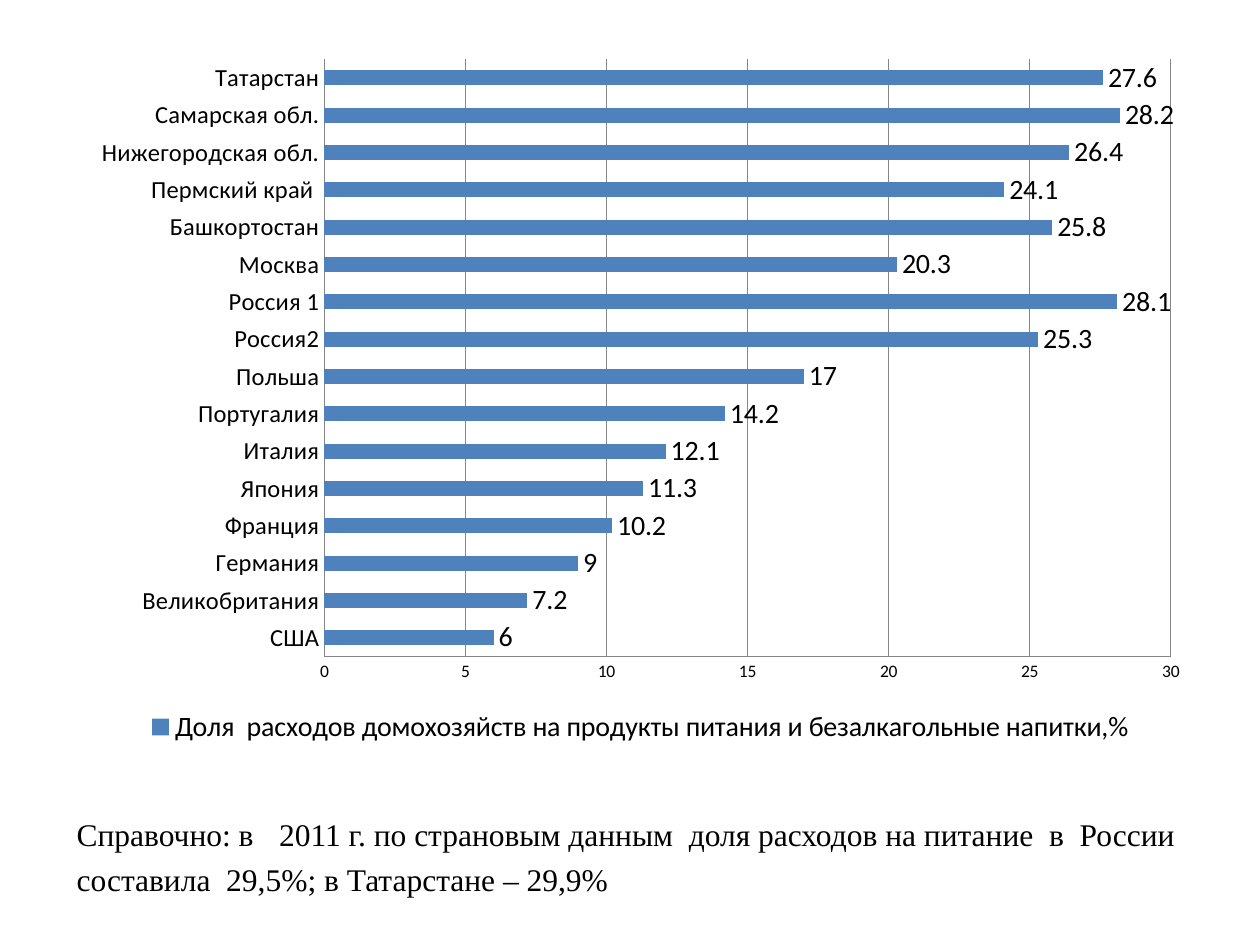
from pptx import Presentation
from pptx.chart.data import CategoryChartData
from pptx.dml.color import RGBColor
from pptx.enum import chart as ch, text
from pptx.util import Inches, Pt

BLACK, BLUE, GRAY = "000000", "4F81BD", "868686"
TITLE = "Доля  расходов домохозяйств на продукты питания и безалкагольные напитки,%"
SHARES = {
    "США": 6, "Великобритания": 7.2, "Германия": 9, "Франция": 10.2,
    "Япония": 11.3, "Италия": 12.1, "Португалия": 14.2, "Польша": 17,
    "Россия2": 25.3, "Россия 1": 28.1, "Москва": 20.3, "Башкортостан": 25.8,
    "Пермский край ": 24.1, "Нижегородская обл.": 26.4,
    "Самарская обл.": 28.2, "Татарстан": 27.6,
}
NOTE = [
    ("Справочно: в ", 18),
    (" ", 40),
    ("2011 г. по страновым данным  доля расходов на питание  в  России "
     "составила  29,5%; в Татарстане – 29,9%", 18),
]


def color(code):
    return RGBColor.from_string(code)


def assign(item, values):
    for key, value in values.items():
        setattr(item, key, value)


def style(font, size, name="Calibri"):
    assign(font, {"size": Pt(size), "name": name})
    font.color.rgb = color(BLACK)


def rule(line):
    line.color.rgb = color(GRAY)
    line.width = Pt(0.75)


def add_bars(slide, box):
    data = CategoryChartData()
    data.categories = list(SHARES)
    data.add_series(TITLE, list(SHARES.values()))
    chart = slide.shapes.add_chart(
        ch.XL_CHART_TYPE.BAR_CLUSTERED, *box, data).chart
    style(chart.font, 10)
    assign(chart, {"has_title": False, "has_legend": True})
    assign(chart.legend, {"position": ch.XL_LEGEND_POSITION.BOTTOM,
                          "include_in_layout": False})
    style(chart.legend.font, 16)

    for axis, size in ((chart.category_axis, 14), (chart.value_axis, 10)):
        assign(axis, {"major_tick_mark": ch.XL_TICK_MARK.NONE,
                      "minor_tick_mark": ch.XL_TICK_MARK.NONE})
        style(axis.tick_labels.font, size)
        rule(axis.format.line)
    assign(chart.value_axis, {"minimum_scale": 0, "maximum_scale": 30,
                              "major_unit": 5, "has_major_gridlines": True})
    rule(chart.value_axis.major_gridlines.format.line)

    plot = chart.plots[0]
    assign(plot, {"gap_width": 150, "vary_by_categories": False,
                  "has_data_labels": True})
    assign(plot.data_labels, {"show_value": True,
                              "position": ch.XL_LABEL_POSITION.OUTSIDE_END})
    style(plot.data_labels.font, 16)
    fill = plot.series[0].format.fill
    fill.solid()
    fill.fore_color.rgb = color(BLUE)


def add_note(slide, box):
    frame = slide.shapes.add_textbox(*box).text_frame
    assign(frame, {"word_wrap": True,
                   "auto_size": text.MSO_AUTO_SIZE.SHAPE_TO_FIT_TEXT})
    for words, size in NOTE:
        run = frame.paragraphs[0].add_run()
        run.text = words
        style(run.font, size, "Times New Roman")


def main():
    deck = Presentation()
    assign(deck, {"slide_width": Inches(10), "slide_height": Inches(7.5)})
    slide = deck.slides.add_slide(deck.slide_layouts[6])
    add_bars(slide, [Inches(n) for n in (0.63, 0.36, 8.91, 5.59)])
    add_note(slide, [Inches(n) for n in (0.51, 6.11, 9.13, 1.08)])
    deck.save("out.pptx")


if __name__ == "__main__":
    main()
